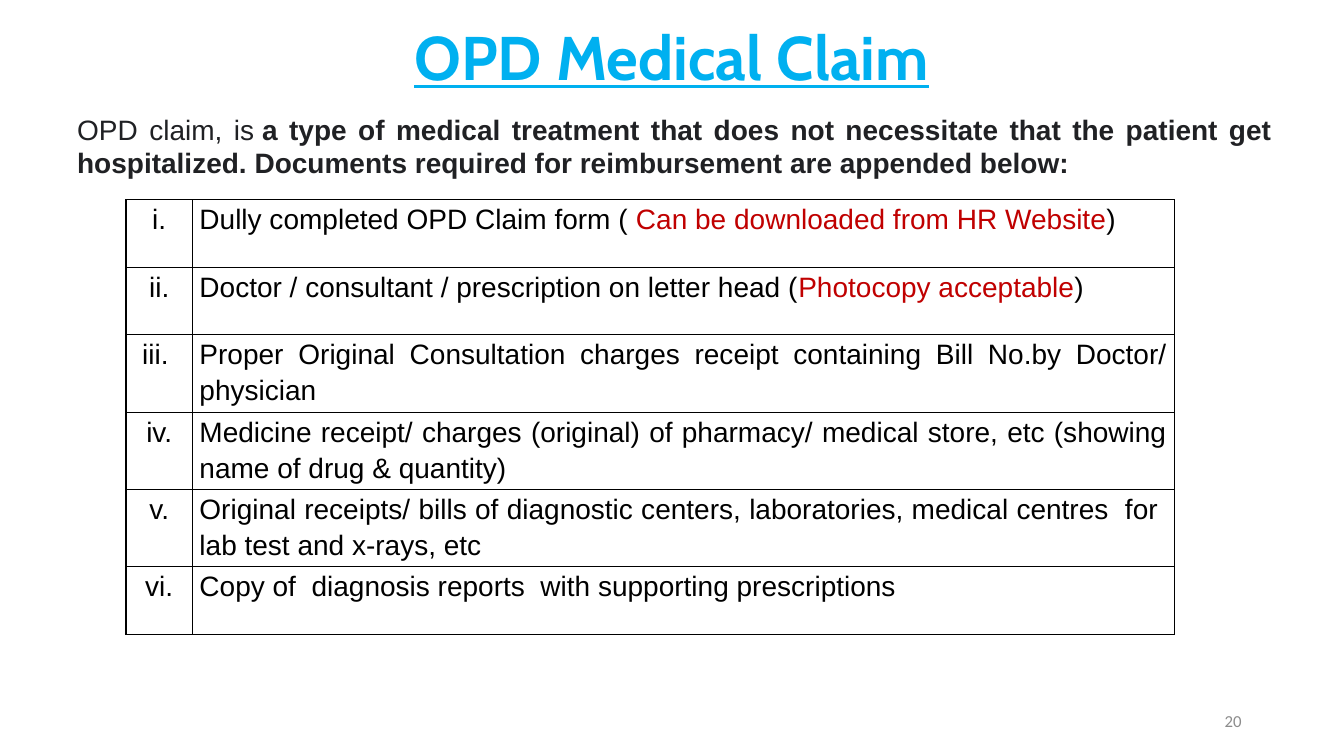
from dataclasses import dataclass

from lxml import etree
from pptx import Presentation
from pptx import util as u
from pptx.dml.color import RGBColor
from pptx.enum import text
from pptx.oxml import ns


@dataclass(frozen=True)
class Theme:
    title: str = "00B0F0"
    intro: str = "202124"
    ink: str = "000000"
    note: str = "C00000"
    number: str = "8C8C8C"
    title_size: int = 44
    body_size: int = 20
    number_size: int = 12


theme = Theme()
Pt = u.Pt
align = text.PP_ALIGN
anchor = text.MSO_ANCHOR


def write(paragraph, parts, alignment, size, font="Arial", spacing=1.0):
    paragraph.alignment = alignment
    paragraph.line_spacing = spacing
    for words, color, bold in parts:
        run = paragraph.add_run()
        run.text = words
        run.font.name = font
        run.font.size = Pt(size)
        run.font.bold = bold
        run.font.color.rgb = RGBColor.from_string(color)


def add_text(left, top, width, height, vertical_anchor):
    frame = slide.shapes.add_textbox(Pt(left), Pt(top), Pt(width), Pt(height)).text_frame
    frame.word_wrap = True
    frame.vertical_anchor = vertical_anchor
    return frame.paragraphs[0]


presentation = Presentation()
presentation.slide_width = Pt(960)
presentation.slide_height = Pt(540)
slide = presentation.slides.add_slide(presentation.slide_layouts[6])

title = add_text(66, 10, 828, 66, anchor.MIDDLE)
write(title, [("OPD Medical Claim", theme.title, True)], align.CENTER, theme.title_size, "Cabin", 0.9)
title.runs[0].font.underline = True

intro = add_text(48, 76.5, 868, 60, anchor.TOP)
write(intro, [
    ("OPD claim, is\u00a0", theme.intro, False),
    ("a type of medical treatment that does not necessitate that the patient get "
     "hospitalized. Documents required for reimbursement are appended below:", theme.intro, True),
], align.JUSTIFY, theme.body_size)

documents = [
    ("i.", "Dully completed OPD Claim form ( ", "Can be downloaded from HR Website", ")"),
    ("ii.", "Doctor / consultant / prescription on letter head (", "Photocopy acceptable", ")"),
    ("iii. ", "Proper Original Consultation charges receipt containing Bill No.by Doctor/ physician"),
    ("iv.", "Medicine receipt/ charges (original) of pharmacy/ medical store, etc "
            "(showing name of drug & quantity)"),
    ("v.", "Original receipts/ bills of diagnostic centers, laboratories, medical centres  for  "
           "lab test and x-rays, etc"),
    ("vi.", "Copy of  diagnosis reports  with supporting prescriptions"),
]
table = slide.shapes.add_table(len(documents), 2, Pt(90), Pt(142.7), Pt(748.8), Pt(289.5)).table
table.first_row = False
table.horz_banding = False
for column, width in zip(table.columns, (47.5, 701.3)):
    column.width = Pt(width)

for row, (numeral, *wording) in enumerate(documents):
    table.rows[row].height = Pt(48.25)
    colors = (theme.ink, theme.note, theme.ink)
    description = [(words, color, False) for words, color in zip(wording, colors)]
    contents = (([(numeral, theme.ink, False)], align.CENTER), (description, align.JUSTIFY))
    for column, (parts, alignment) in enumerate(contents):
        cell = table.cell(row, column)
        cell.margin_left = cell.margin_right = Pt(5)
        cell.margin_top = cell.margin_bottom = Pt(0)
        write(cell.text_frame.paragraphs[0], parts, alignment, theme.body_size, spacing=1.15)
        properties = cell._tc.get_or_add_tcPr()
        for side in ("a:lnL", "a:lnR", "a:lnT", "a:lnB"):
            border = etree.SubElement(properties, ns.qn(side), w=str(Pt(1)))
            fill = etree.SubElement(border, ns.qn("a:solidFill"))
            etree.SubElement(fill, ns.qn("a:srgbClr"), val=theme.ink)
        cell.fill.background()

page_number = add_text(678, 500.5, 216, 28.8, anchor.MIDDLE)
write(page_number, [("20", theme.number, False)], align.RIGHT, theme.number_size, "Calibri")

presentation.save("out.pptx")
